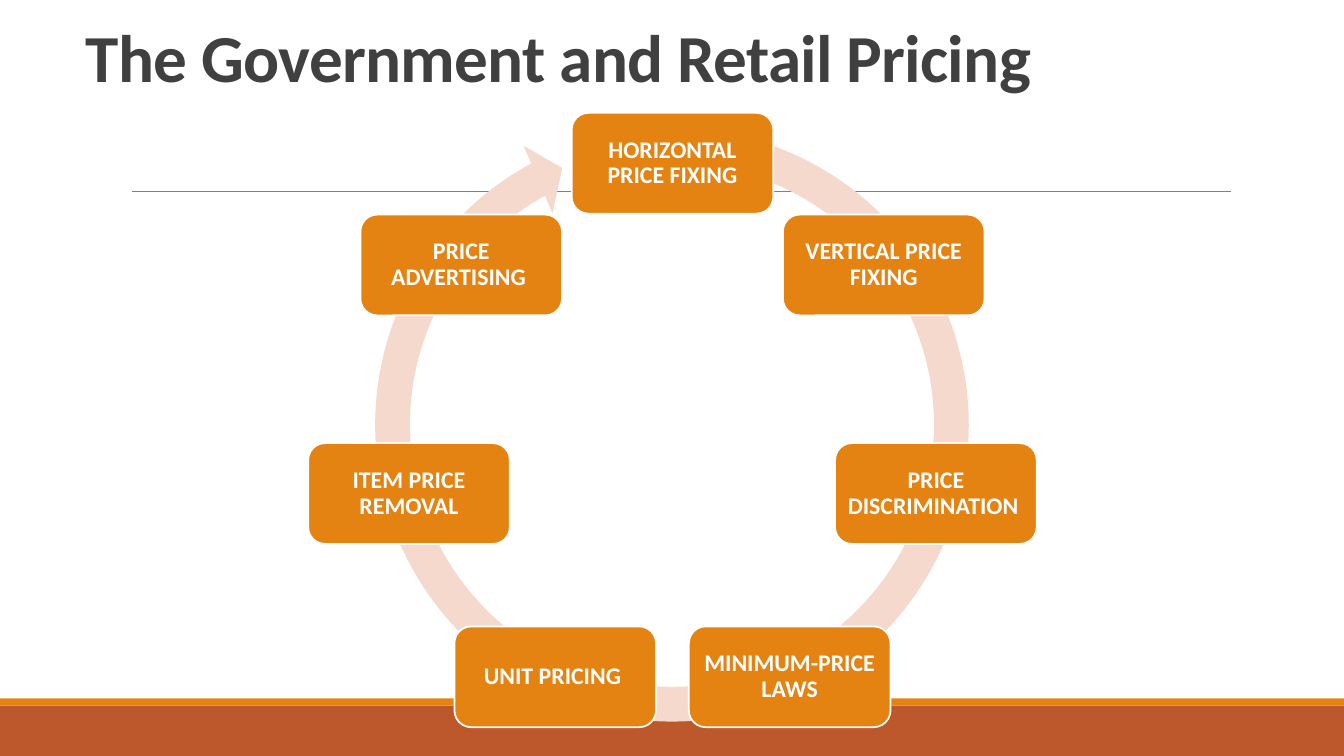
from math import cos, pi, sin

from pptx import Presentation
from pptx.dml.color import RGBColor
from pptx.enum.shapes import MSO_CONNECTOR as Connector, MSO_SHAPE as Shape
from pptx.enum.text import MSO_ANCHOR as Anchor, MSO_AUTO_SIZE as AutoSize, PP_ALIGN as Align
from pptx.oxml.ns import qn
from pptx.util import Inches, Pt

COLORS = {
    "rust": "BD582C",
    "orange": "E48312",
    "blush": "F5D9CC",
    "rule": "808080",
    "title": "404040",
    "white": "FFFFFF",
}
STEPS = [
    "HORIZONTAL PRICE FIXING",
    "VERTICAL PRICE FIXING",
    "PRICE DISCRIMINATION\u00a0",
    "MINIMUM-PRICE LAWS",
    "UNIT PRICING\u00a0",
    "ITEM PRICE REMOVAL",
    "PRICE ADVERTISING\u00a0",
]
CENTER_X, CENTER_Y, RADIUS = 6.67, 4.3, 2.68
BOX_WIDTH, BOX_HEIGHT = 2, 1


class SlideBuilder:
    font = "Calibri"

    def __init__(self, slide):
        self.slide = slide

    def color(self, name):
        return RGBColor.from_string(COLORS[name])

    def style_text(self, frame, text, size, color, spacing, align):
        frame.text = text
        frame.word_wrap = True
        frame.auto_size = AutoSize.NONE
        para = frame.paragraphs[0]
        para.alignment = align
        para.line_spacing = spacing
        font = para.runs[0].font
        font.name, font.size, font.bold = self.font, Pt(size), True
        font.color.rgb = self.color(color)
        return para.runs[0]

    def title(self, text, left, top, width, height):
        box = self.slide.shapes.title
        box.left, box.top = Inches(left), Inches(top)
        box.width, box.height = Inches(width), Inches(height)
        run = self.style_text(box.text_frame, text, 48, "title", 0.85, Align.LEFT)
        run.font._element.set("spc", "-50")
        box.text_frame.vertical_anchor = Anchor.BOTTOM

    def shape(self, kind, left, top, width, height, fill):
        shape = self.slide.shapes.add_shape(
            kind, Inches(left), Inches(top), Inches(width), Inches(height))
        shape.shadow.inherit = False
        shape.fill.solid()
        shape.fill.fore_color.rgb = self.color(fill)
        shape.line.fill.background()
        return shape

    def rule(self, left, right, y):
        line = self.slide.shapes.add_connector(
            Connector.STRAIGHT, Inches(left), Inches(y), Inches(right), Inches(y))
        line.line.color.rgb = self.color("rule")
        line.line.width = Pt(0.5)
        properties = line._element.spPr
        properties.append(properties.makeelement(qn("a:effectLst"), {}))

    def cycle_arrow(self, left, top, size):
        arrow = self.shape(Shape.CIRCULAR_ARROW, left, top, size, size, "blush")
        for index, value in enumerate([0.055, 3.307, 144.827, 169.692, 0.058]):
            arrow.adjustments[index] = value

    def step(self, text, center_x, center_y):
        box = self.shape(Shape.ROUNDED_RECTANGLE, center_x - BOX_WIDTH / 2,
                         center_y - BOX_HEIGHT / 2, BOX_WIDTH, BOX_HEIGHT, "orange")
        box.line.color.rgb = self.color("white")
        box.line.width = Pt(1.25)
        frame = box.text_frame
        frame.margin_left = frame.margin_right = Inches(0.07)
        frame.margin_top = frame.margin_bottom = Inches(0.07)
        frame.vertical_anchor = Anchor.MIDDLE
        self.style_text(frame, text, 17, "white", 0.9, Align.CENTER)


def main():
    deck = Presentation()
    deck.slide_width, deck.slide_height = Inches(13.33), Inches(7.5)
    page = SlideBuilder(deck.slides.add_slide(deck.slide_layouts[5]))

    page.shape(Shape.RECTANGLE, 0, 7, 13.33, 0.5, "rust")
    page.shape(Shape.RECTANGLE, 0, 6.93, 13.33, 0.07, "orange")
    page.rule(1.31, 12.21, 1.9)
    page.title("The Government and Retail Pricing", 0.75, -0.41, 12.38, 1.41)

    page.cycle_arrow(3.53, 1.08, 6.27)
    for index, text in enumerate(STEPS):
        angle = 2 * pi * index / len(STEPS)
        page.step(text, CENTER_X + RADIUS * sin(angle), CENTER_Y - RADIUS * cos(angle))

    deck.save("out.pptx")


if __name__ == "__main__":
    main()
